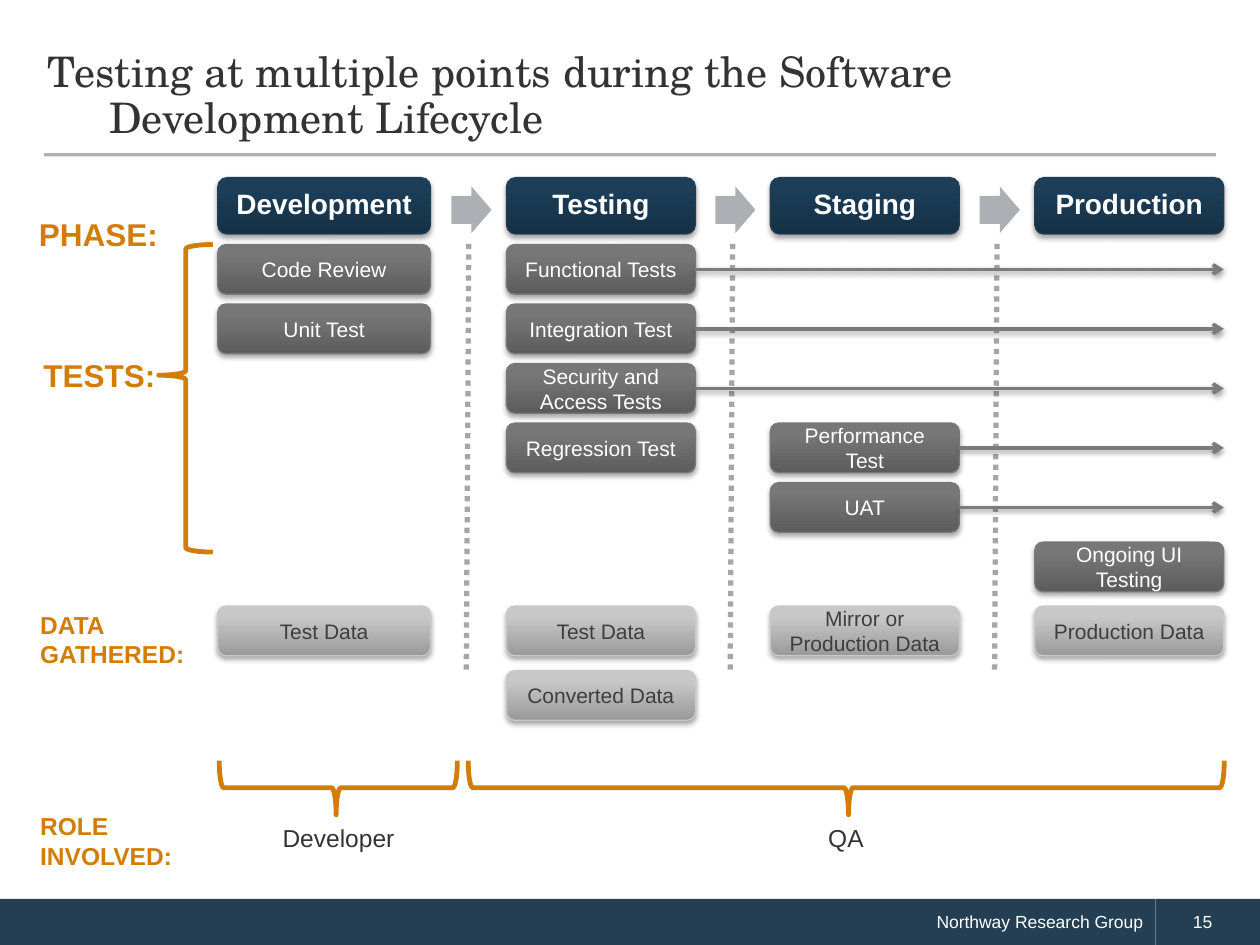
from lxml import etree
from copy import deepcopy
from pptx import Presentation
from pptx.dml.color import RGBColor
from pptx.enum.dml import MSO_LINE
from pptx.enum.shapes import MSO_CONNECTOR, MSO_SHAPE
from pptx.enum.text import MSO_ANCHOR, PP_ALIGN
from pptx.oxml.ns import qn
from pptx.util import Cm, Pt

RECT, ROUNDED = MSO_SHAPE.RECTANGLE, MSO_SHAPE.ROUNDED_RECTANGLE
ARROW, BRACE = MSO_SHAPE.RIGHT_ARROW, MSO_SHAPE.LEFT_BRACE
LEFT, CENTER, RIGHT = PP_ALIGN.LEFT, PP_ALIGN.CENTER, PP_ALIGN.RIGHT
TOP, MIDDLE = MSO_ANCHOR.TOP, MSO_ANCHOR.MIDDLE
STRAIGHT, DOTTED = MSO_CONNECTOR.STRAIGHT, MSO_LINE.ROUND_DOT

# Content
TITLE = "Testing at multiple points during the Software Development Lifecycle"
FOOTER, PAGE = "Northway Research Group", "15"
PHASES = ["Development", "Testing", "Staging", "Production"]
# test name, phase column, row, continues through production
TESTS = [
    ("Code Review", 0, 0, False), ("Unit Test", 0, 1, False),
    ("Functional Tests", 1, 0, True), ("Integration Test", 1, 1, True),
    ("Security and Access Tests", 1, 2, True), ("Regression Test", 1, 3, False),
    ("Performance Test", 2, 3, True), ("UAT", 2, 4, True),
    ("Ongoing UI Testing", 3, 5, False),
]
DATA = [
    ("Test Data", 0, 0), ("Test Data", 1, 0), ("Converted Data", 1, 1),
    ("Mirror or Production Data", 2, 0), ("Production Data", 3, 0),
]
# label, left, top, width, height, size, alignment
LABELS = [
    ("PHASE:", 0.13, 4.22, 3.71, 1.02, 18, CENTER),
    ("TESTS:", 0.15, 7.06, 3.71, 1.02, 18, CENTER),
    ("DATA GATHERED:", 0.56, 12.17, 4.75, 1.45, 14, LEFT),
    ("ROLE\nINVOLVED:", 0.56, 16.23, 4.75, 1.45, 14, LEFT),
]
# role, text left, brace left, brace span, brace point
ROLES = [("Developer", 4.45, 4.42, 4.8, 0.491), ("QA", 14.68, 9.44, 15.24, 0.503)]

# Styles: gradient stops from bottom to top, and outline
ORANGE, NAVY, INK = "D17D08", "243F54", "333333"
PHASE_STYLE = (["153044", "1C3E58", "1B3E5A"], "223E53")
TEST_STYLE = (["5C5C5C", "777777", "787878"], "787878")
DATA_STYLE = (["9A9A9A", "C8C8C8", "C9C9C9"], "C9C9C9")
STOPS = [0, 0.8, 1]

# Grid in centimetres
COLUMNS = [(4.39, 4.29), (10.21, 3.81), (15.53, 3.81), (20.86, 3.81)]
PHASE_TOP, TEST_TOP, DATA_TOP = 3.58, 4.93, 12.22
TEST_PITCH, DATA_PITCH, BOX_HEIGHT = 1.2, 1.3, 1.0
RIGHT_EDGE = sum(COLUMNS[-1])
BRACE_DEPTH = 1.09

prs = Presentation()
prs.slide_width, prs.slide_height = Cm(25.4), Cm(19.05)
slide = prs.slides.add_slide(prs.slide_layouts[5])


def rgb(value):
    return RGBColor.from_string(value)


def write(shape, text, size=12, color="FFFFFF", font="Arial", bold=False,
          align=CENTER, anchor=MIDDLE, spacing=None, margin=0, indent=0):
    frame = shape.text_frame
    frame.word_wrap, frame.vertical_anchor = True, anchor
    frame.text = text
    for paragraph in frame.paragraphs:
        paragraph.alignment = align
        if spacing:
            paragraph.line_spacing = spacing
        properties = paragraph._p.get_or_add_pPr()
        properties.set("marL", str(Cm(margin)))
        properties.set("indent", str(Cm(indent)))
        for run in paragraph.runs:
            run.font.size, run.font.name, run.font.bold = Pt(size), font, bold
            run.font.color.rgb = rgb(color)


def set_shadow(shape, opacity=0, distance=1.8):
    effects = etree.SubElement(shape._element.spPr, qn("a:effectLst"))
    if opacity:
        outer = etree.SubElement(
            effects, qn("a:outerShdw"), blurRad=str(Pt(3.1)), dist=str(Pt(distance)),
            dir="5400000", rotWithShape="0")
        black = etree.SubElement(outer, qn("a:srgbClr"), val="000000")
        etree.SubElement(black, qn("a:alpha"), val=str(opacity * 1000))


def add_shape(kind, left, top, width, height, fill=None, line=None, weight=0.75):
    shape = slide.shapes.add_shape(kind, Cm(left), Cm(top), Cm(width), Cm(height))
    if fill:
        shape.fill.solid()
        shape.fill.fore_color.rgb = rgb(fill)
    else:
        shape.fill.background()
    if line:
        shape.line.color.rgb = rgb(line)
        shape.line.width = Pt(weight)
    else:
        shape.line.fill.background()
    shape.shadow.inherit = False
    return shape


def add_box(text, column, top, height, style, **text_format):
    colors, outline = style
    left, width = COLUMNS[column]
    box = add_shape(ROUNDED, left, top, width, height, line=outline)
    box.fill.gradient()
    box.fill.gradient_angle = 90
    stops = box._element.spPr.find(".//" + qn("a:gsLst"))
    stops.insert(1, deepcopy(stops[0]))
    for stop, position, color in zip(box.fill.gradient_stops, STOPS, colors):
        stop.position = position
        stop.color.rgb = rgb(color)
    box._element.spPr.remove(box._element.spPr.find(qn("a:effectLst")))
    set_shadow(box, 35)
    write(box, text, **text_format)


def add_line(x1, y1, x2, y2, color, weight, shadow=0):
    line = slide.shapes.add_connector(STRAIGHT, Cm(x1), Cm(y1), Cm(x2), Cm(y2))
    line.line.color.rgb = rgb(color)
    line.line.width = Pt(weight)
    set_shadow(line, shadow, 1.6)
    return line


def add_brace(left, top, width, height, point, rotation=0):
    brace = add_shape(BRACE, left, top, width, height, line=ORANGE, weight=2.75)
    brace.adjustments[0], brace.adjustments[1] = 0.083, point
    brace.rotation = rotation


def add_text(text, left, top, width, height, **text_format):
    box = slide.shapes.add_textbox(Cm(left), Cm(top), Cm(width), Cm(height))
    write(box, text, anchor=TOP, **text_format)


# Footer and title
write(add_shape(RECT, 0, 18.12, 23.29, 0.93, NAVY), FOOTER, size=10,
      align=RIGHT, margin=0.74)
write(add_shape(RECT, 23.29, 18.12, 2.11, 0.93, NAVY), PAGE, size=10,
      align=LEFT, margin=0.51)
rule = add_line(0.89, 3.12, 24.51, 3.12, "45433E", 1.75)
rule_color = rule._element.spPr.find(".//" + qn("a:srgbClr"))
etree.SubElement(rule_color, qn("a:alpha"), val="42000")
title = slide.shapes.title
title.left, title.top, title.width, title.height = Cm(0.71), Cm(0.74), Cm(23.95), Cm(2.39)
write(title, TITLE, size=24, color=INK, font="TeX Gyre Schola", align=LEFT,
      spacing=Pt(26), margin=1.24, indent=-1.24)

# Phases, with an arrow and a dotted divider before each later one
for column, phase in enumerate(PHASES):
    add_box(phase, column, PHASE_TOP, 1.14, PHASE_STYLE, size=16, bold=True, spacing=0.9)
    if column:
        left = COLUMNS[column][0]
        arrow = add_shape(ARROW, left - 1.11, 3.76, 0.81, 0.94, "ACB0B4")
        arrow.adjustments[0], arrow.adjustments[1] = 0.6, 0.5
        divider = add_line(left - 0.81, 13.5, left - 0.76, 4.83, "A6A6A6", 3)
        divider.line.dash_style = DOTTED

# Tests
for test, column, row, continues in TESTS:
    top = TEST_TOP + row * TEST_PITCH
    add_box(test, column, top, BOX_HEIGHT, TEST_STYLE)
    if continues:
        middle = top + BOX_HEIGHT / 2
        span = add_line(sum(COLUMNS[column]), middle, RIGHT_EDGE, middle, "7B7B7B", 2, 38)
        etree.SubElement(span.line._get_or_add_ln(), qn("a:tailEnd"), type="arrow")
add_brace(3.2, TEST_TOP, BRACE_DEPTH, 6.2, 0.425)

# Data gathered
for data, column, row in DATA:
    add_box(data, column, DATA_TOP + row * DATA_PITCH, BOX_HEIGHT, DATA_STYLE, color="3E3E3E")

# Row labels
for label, left, top, width, height, size, align in LABELS:
    add_text(label, left, top, width, height, size=size, color=ORANGE, bold=True, align=align)

# Roles under braces turned to point down
for role, text_left, left, span, point in ROLES:
    add_brace(left + (span - BRACE_DEPTH) / 2, 15.88 - span / 2, BRACE_DEPTH, span, point, 270)
    add_text(role, text_left, 16.46, 4.75, 0.86, size=14, color=INK)

prs.save("out.pptx")
